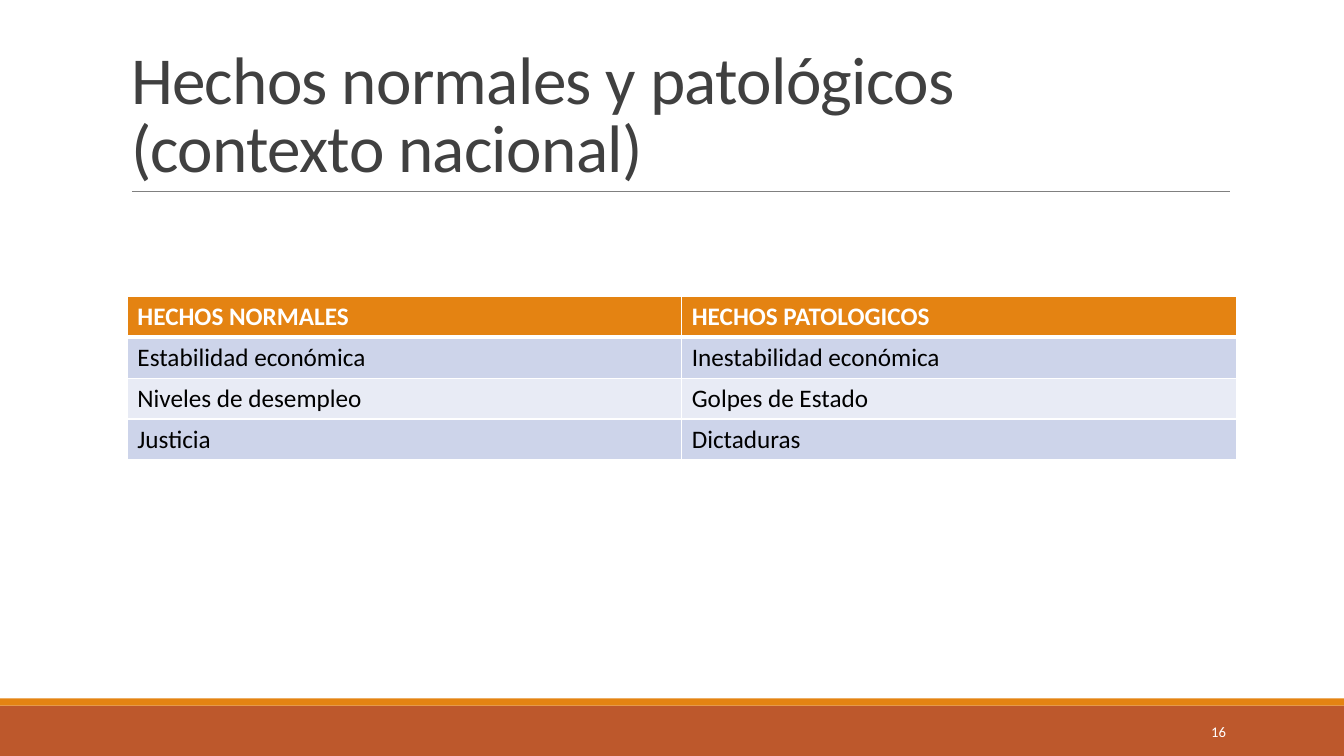
import pptx
import pptx.util
import pptx.dml.color
import pptx.enum.shapes
import pptx.enum.text
import pptx.oxml
import pptx.oxml.ns
from dataclasses import dataclass

Pt = pptx.util.Pt
RGBColor = pptx.dml.color.RGBColor
PP_ALIGN = pptx.enum.text.PP_ALIGN
MSO_ANCHOR = pptx.enum.text.MSO_ANCHOR


@dataclass(frozen=True)
class Theme:
    font: str = "Calibri"
    title_size: float = 48
    table_size: float = 18
    number_size: float = 10.5
    orange: str = "E48312"
    rust: str = "BD582C"
    title: str = "404040"
    rule: str = "808080"
    white: str = "FFFFFF"
    black: str = "000000"
    bands: tuple = ("CDD4EA", "E8EBF5")


theme = Theme()


def format_text(paragraph, size, color, bold=False):
    values = {"name": theme.font, "size": Pt(size), "bold": bold}
    for run in paragraph.runs:
        for name, value in values.items():
            setattr(run.font, name, value)
        run.font.color.rgb = RGBColor.from_string(color)


def add_border(cell, side, width):
    """Draw one white cell border; side is L, R, T or B. Call before filling the cell."""
    cell._tc.get_or_add_tcPr().append(pptx.oxml.parse_xml(
        f'<a:ln{side} {pptx.oxml.ns.nsdecls("a")} w="{Pt(width)}"><a:solidFill>'
        f'<a:srgbClr val="{theme.white}"/></a:solidFill></a:ln{side}>'))


presentation = pptx.Presentation()
presentation.slide_width = Pt(960)
presentation.slide_height = Pt(540)
slide = presentation.slides.add_slide(presentation.slide_layouts[5])

# Footer bands
for top, height, color in ((504, 36, theme.rust), (498.75, 5.25, theme.orange)):
    band = slide.shapes.add_shape(
        pptx.enum.shapes.MSO_SHAPE.RECTANGLE, Pt(0), Pt(top), Pt(960), Pt(height))
    band.shadow.inherit = False
    band.fill.solid()
    band.fill.fore_color.rgb = RGBColor.from_string(color)
    band.line.fill.background()

# Title and rule
rule = slide.shapes.add_connector(
    pptx.enum.shapes.MSO_CONNECTOR.STRAIGHT, Pt(94.3), Pt(136.8), Pt(878.8), Pt(136.8))
rule.line.color.rgb = RGBColor.from_string(theme.rule)
rule.line.width = Pt(0.5)
rule._element.spPr.append(
    pptx.oxml.parse_xml(f'<a:effectLst {pptx.oxml.ns.nsdecls("a")}/>'))

title = slide.shapes.title
title.left, title.top, title.width, title.height = Pt(86.4), Pt(22.6), Pt(792), Pt(114.2)
title.text = "Hechos normales y patológicos (contexto nacional)"
frame_format = {
    "word_wrap": True,
    "auto_size": pptx.enum.text.MSO_AUTO_SIZE.NONE,
    "vertical_anchor": MSO_ANCHOR.BOTTOM,
    "margin_right": Pt(16),
}
for name, value in frame_format.items():
    setattr(title.text_frame, name, value)
paragraph = title.text_frame.paragraphs[0]
paragraph.alignment = PP_ALIGN.LEFT
paragraph.line_spacing = 0.85
format_text(paragraph, theme.title_size, theme.title)
paragraph.runs[0].font._element.set("spc", "-50")

# Table of normal and pathological facts
rows = (
    ("HECHOS NORMALES", "HECHOS PATOLOGICOS"),
    ("Estabilidad económica", "Inestabilidad económica"),
    ("Niveles de desempleo", "Golpes de Estado"),
    ("Justicia", "Dictaduras"),
)
table = slide.shapes.add_table(
    len(rows), 2, Pt(91), Pt(211.7), Pt(792), Pt(29.2 * len(rows))).table
for row_index, row in enumerate(rows):
    header = row_index == 0
    fill = theme.orange if header else theme.bands[(row_index - 1) % 2]
    for column_index, text in enumerate(row):
        cell = table.cell(row_index, column_index)
        for side in "LRTB":
            thick = (side == "B" and header) or (side == "T" and row_index == 1)
            add_border(cell, side, 3 if thick else 1)
        cell.fill.solid()
        cell.fill.fore_color.rgb = RGBColor.from_string(fill)
        cell.text = text
        format_text(cell.text_frame.paragraphs[0], theme.table_size,
                    theme.white if header else theme.black, header)

# Slide number
number = slide.shapes.add_textbox(Pt(779.8), Pt(508.3), Pt(103), Pt(28.8))
number.text_frame.word_wrap = True
number.text_frame.vertical_anchor = MSO_ANCHOR.MIDDLE
number.text_frame.text = "16"
paragraph = number.text_frame.paragraphs[0]
paragraph.alignment = PP_ALIGN.RIGHT
format_text(paragraph, theme.number_size, theme.white)

presentation.save("out.pptx")
